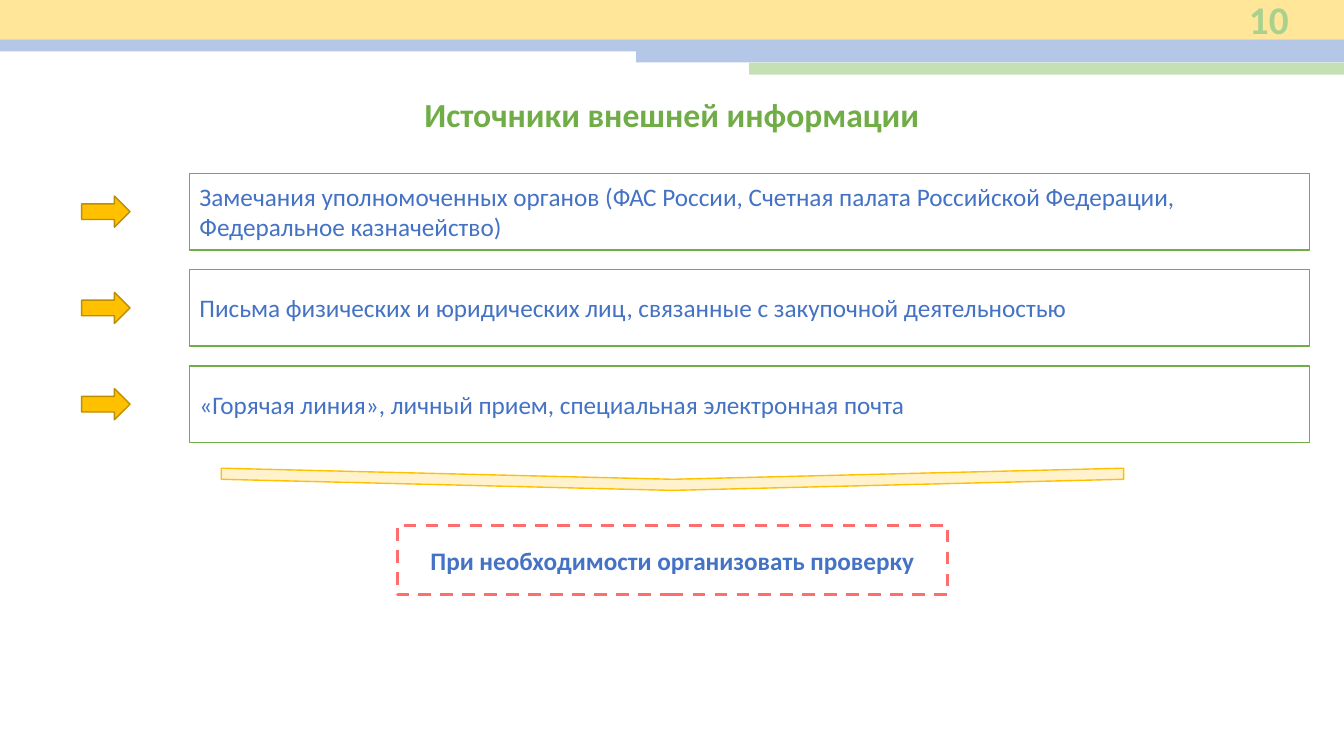
"""Builds the slide on sources of external information."""
from dataclasses import dataclass

from pptx import Presentation
from pptx.dml.color import RGBColor
from pptx.enum import dml, shapes, text
from pptx.util import Inches, Pt

GOLD = RGBColor(0xFF, 0xC0, 0x00)
DARK_GOLD = RGBColor(0xBD, 0x8E, 0x00)
PALE_GOLD = RGBColor(0xFF, 0xF2, 0xCC)
BAND_YELLOW = RGBColor(0xFF, 0xE6, 0x99)
BAND_BLUE = RGBColor(0xB4, 0xC7, 0xE7)
BAND_GREEN = RGBColor(0xC5, 0xE0, 0xB4)
NUMBER_GREEN = RGBColor(0xA9, 0xD1, 0x8E)
GREEN = RGBColor(0x70, 0xAD, 0x47)
BLUE = RGBColor(0x44, 0x72, 0xC4)
RED = RGBColor(0xFF, 0x6D, 0x6D)

SHAPE = shapes.MSO_SHAPE
ALIGN = text.PP_ALIGN
ANCHOR = text.MSO_ANCHOR

SLIDE_W = 13.33
ROW_TOP = 1.72
ROW_STEP = 0.955
ROW_H = 0.76
ARROW_H = 0.31


@dataclass(frozen=True)
class Box:
    left: float
    top: float
    width: float
    height: float

    def emu(self) -> tuple:
        return tuple(Inches(v) for v in (self.left, self.top, self.width, self.height))


@dataclass(frozen=True)
class Band:
    left: float
    top: float
    height: float
    color: RGBColor


BANDS = (
    Band(0, 0, 0.39, BAND_YELLOW),
    Band(0, 0.39, 0.12, BAND_BLUE),
    Band(6.31, 0.5, 0.12, BAND_BLUE),
    Band(7.43, 0.62, 0.12, BAND_GREEN),
)

SOURCES = (
    "Замечания уполномоченных органов (ФАС России, Счетная палата Российской Федерации, "
    "Федеральное казначейство)",
    "Письма физических и юридических лиц, связанные с закупочной деятельностью",
    "«Горячая линия», личный прием, специальная электронная почта",
)


def add_shape(s, kind, box: Box, fill: RGBColor | None = None,
              line: RGBColor | None = None, weight: float = 1):
    sp = s.shapes.add_shape(kind, *box.emu())
    sp.shadow.inherit = False
    if fill is None:
        sp.fill.background()
    else:
        sp.fill.solid()
        sp.fill.fore_color.rgb = fill
    if line is None:
        sp.line.fill.background()
    else:
        sp.line.color.rgb = line
        sp.line.width = Pt(weight)
    return sp


def write(sp, content: str, *, size: float = 18, color: RGBColor = BLUE, bold: bool = False,
          align=ALIGN.LEFT, anchor=ANCHOR.MIDDLE) -> None:
    tf = sp.text_frame
    tf.word_wrap = True
    tf.auto_size = text.MSO_AUTO_SIZE.NONE
    tf.vertical_anchor = anchor
    p = tf.paragraphs[0]
    p.alignment = align
    r = p.add_run()
    r.text = content
    r.font.name = "Calibri"
    r.font.size = Pt(size)
    r.font.bold = bold
    r.font.color.rgb = color


def add_header(s) -> None:
    for band in BANDS:
        box = Box(band.left, band.top, SLIDE_W - band.left, band.height)
        add_shape(s, SHAPE.RECTANGLE, box, fill=band.color)
    number = s.shapes.add_textbox(*Box(12.05, 0, 0.83, 0.38).emu())
    write(number, "10", size=28, color=NUMBER_GREEN, bold=True, align=ALIGN.RIGHT)


def add_title(s) -> None:
    title = s.shapes.title
    title.left, title.top, title.width, title.height = Box(0.6, 0.88, 12.13, 0.5).emu()
    write(title, "Источники внешней информации", size=24, color=GREEN, bold=True,
          align=ALIGN.CENTER, anchor=ANCHOR.TOP)


def add_source(s, index: int, content: str) -> None:
    top = ROW_TOP + index * ROW_STEP
    frame = add_shape(s, SHAPE.RECTANGLE, Box(1.88, top, 11.11, ROW_H), line=GREEN)
    write(frame, content)
    arrow = Box(0.81, top + (ROW_H - ARROW_H) / 2, 0.48, ARROW_H)
    add_shape(s, SHAPE.RIGHT_ARROW, arrow, fill=GOLD, line=DARK_GOLD)


def add_conclusion(s) -> None:
    chevron = add_shape(s, SHAPE.CHEVRON, Box(6.56, 0.28, 0.22, 8.95),
                        fill=PALE_GOLD, line=GOLD)
    chevron.rotation = 90
    result = add_shape(s, SHAPE.RECTANGLE, Box(3.94, 5.21, 5.46, 0.69), line=RED, weight=2.25)
    result.line.dash_style = dml.MSO_LINE.DASH
    write(result, "При необходимости организовать проверку", bold=True, align=ALIGN.CENTER)


def main() -> None:
    prs = Presentation()
    prs.slide_width, prs.slide_height = Inches(SLIDE_W), Inches(7.5)
    s = prs.slides.add_slide(prs.slide_layouts[5])
    add_header(s)
    add_title(s)
    for index, content in enumerate(SOURCES):
        add_source(s, index, content)
    add_conclusion(s)
    prs.save("out.pptx")


if __name__ == "__main__":
    main()
